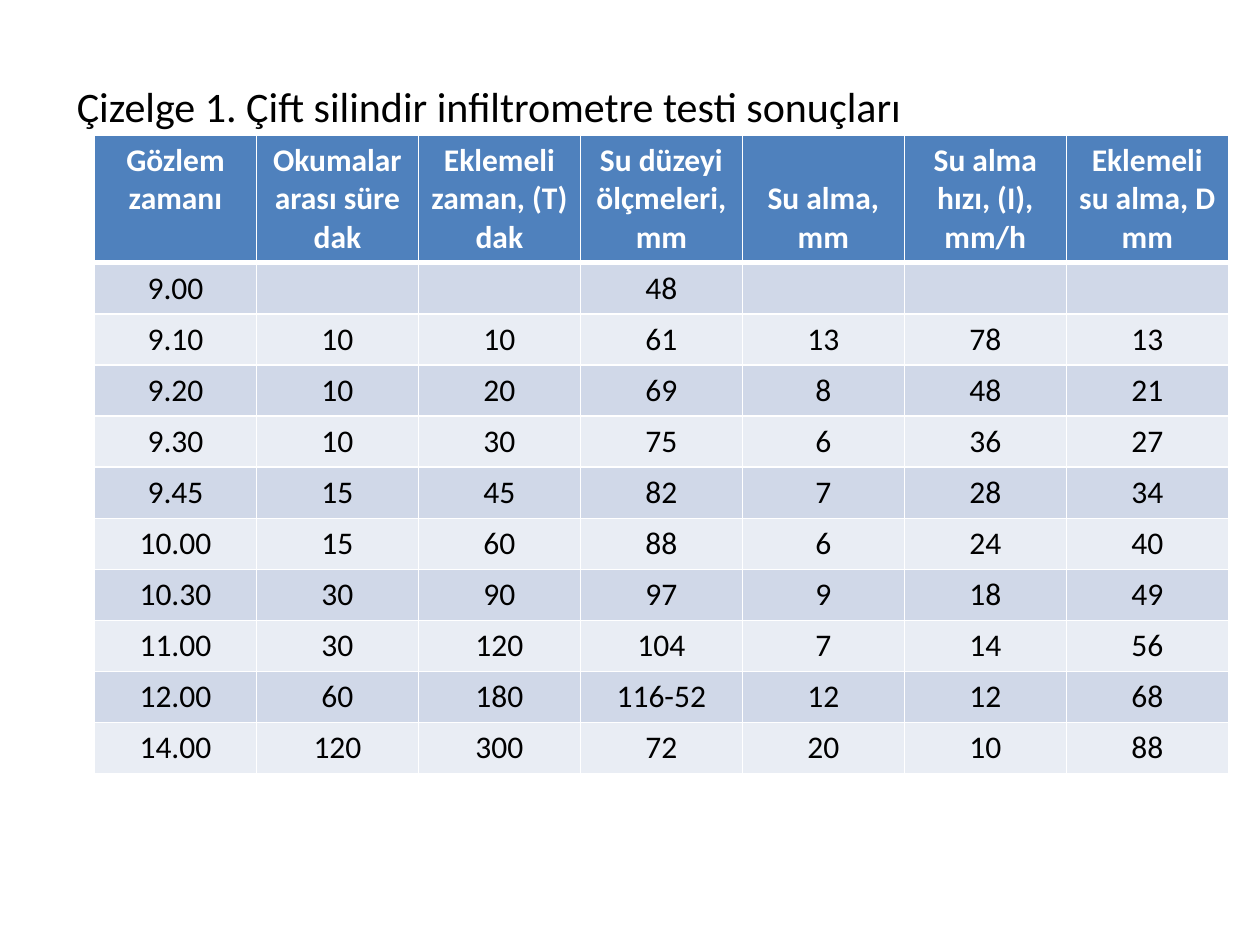
import pptx
import pptx.dml.color
import pptx.enum.text
import pptx.oxml
import pptx.oxml.ns
import pptx.util
from pptx.util import Inches

FONT = "Calibri"
TITLE = "Çizelge 1. Çift silindir infiltrometre testi sonuçları"
HEADERS = [
    "Gözlem zamanı",
    "Okumalar arası süre\ndak",
    "Eklemeli zaman, (T)\ndak",
    "Su düzeyi ölçmeleri, mm",
    "Su alma, mm",
    "Su alma hızı, (I), mm/h",
    "Eklemeli su alma, D mm",
]
READINGS = [
    ["9.00", "", "", "48", "", "", ""],
    ["9.10", "10", "10", "61", "13", "78", "13"],
    ["9.20", "10", "20", "69", "8", "48", "21"],
    ["9.30", "10", "30", "75", "6", "36", "27"],
    ["9.45", "15", "45", "82", "7", "28", "34"],
    ["10.00", "15", "60", "88", "6", "24", "40"],
    ["10.30", "30", "90", "97", "9", "18", "49"],
    ["11.00", "30", "120", "104", "7", "14", "56"],
    ["12.00", "60", "180", "116-52", "12", "12", "68"],
    ["14.00", "120", "300", "72", "20", "10", "88"],
]
HEADER_FILL = "4F81BD"
BAND_FILLS = ["D0D8E8", "E9EDF4"]


def color(hex_string):
    return pptx.dml.color.RGBColor.from_string(hex_string)


def format_text(text_frame, size, hex_string, alignment, bold=False):
    for paragraph in text_frame.paragraphs:
        paragraph.alignment = alignment
        for run in paragraph.runs:
            run.font.name = FONT
            run.font.size = pptx.util.Pt(size)
            run.font.bold = bold
            run.font.color.rgb = color(hex_string)


def set_borders(cell, bottom_width):
    properties = cell._tc.get_or_add_tcPr()
    for side, width in (("L", 1), ("R", 1), ("T", 1), ("B", bottom_width)):
        properties.append(pptx.oxml.parse_xml(
            f'<a:ln{side} {pptx.oxml.ns.nsdecls("a")} w="{pptx.util.Pt(width)}">'
            f'<a:solidFill><a:srgbClr val="FFFFFF"/></a:solidFill></a:ln{side}>'
        ))


def fill_cell(cell, text, fill, text_color, bold, bottom_width):
    set_borders(cell, bottom_width)
    cell.fill.solid()
    cell.fill.fore_color.rgb = color(fill)
    cell.text_frame.text = text
    format_text(cell.text_frame, 18, text_color,
                pptx.enum.text.PP_ALIGN.CENTER, bold)


def add_title(slide, left, top, width, height):
    title = slide.shapes.title
    title.left, title.top, title.width, title.height = left, top, width, height
    title.text_frame.text = TITLE
    title.text_frame.vertical_anchor = pptx.enum.text.MSO_ANCHOR.MIDDLE
    format_text(title.text_frame, 24, "000000", pptx.enum.text.PP_ALIGN.LEFT)


def add_readings_table(slide, left, top, width, height):
    table = slide.shapes.add_table(
        len(READINGS) + 1, len(HEADERS), left, top, width, height).table
    header_height = Inches(1.01)
    table.rows[0].height = header_height
    for row_index, readings in enumerate(READINGS, start=1):
        table.rows[row_index].height = (height - header_height) // len(READINGS)
        fill = BAND_FILLS[(row_index - 1) % 2]
        for column_index, reading in enumerate(readings):
            fill_cell(table.cell(row_index, column_index), reading,
                      fill, "000000", False, 1)
    for column_index, header in enumerate(HEADERS):
        fill_cell(table.cell(0, column_index), header,
                  HEADER_FILL, "FFFFFF", True, 3)
    intake_header = table.cell(0, HEADERS.index("Su alma, mm"))
    intake_header.vertical_anchor = pptx.enum.text.MSO_ANCHOR.BOTTOM


def main():
    presentation = pptx.Presentation()
    presentation.slide_width = Inches(10)
    presentation.slide_height = Inches(7.5)
    slide = presentation.slides.add_slide(presentation.slide_layouts[5])
    add_title(slide, Inches(0.51), Inches(0.6), Inches(9), Inches(0.48))
    add_readings_table(slide, Inches(0.75), Inches(1.07), Inches(9), Inches(5.06))
    presentation.save("out.pptx")


if __name__ == "__main__":
    main()
